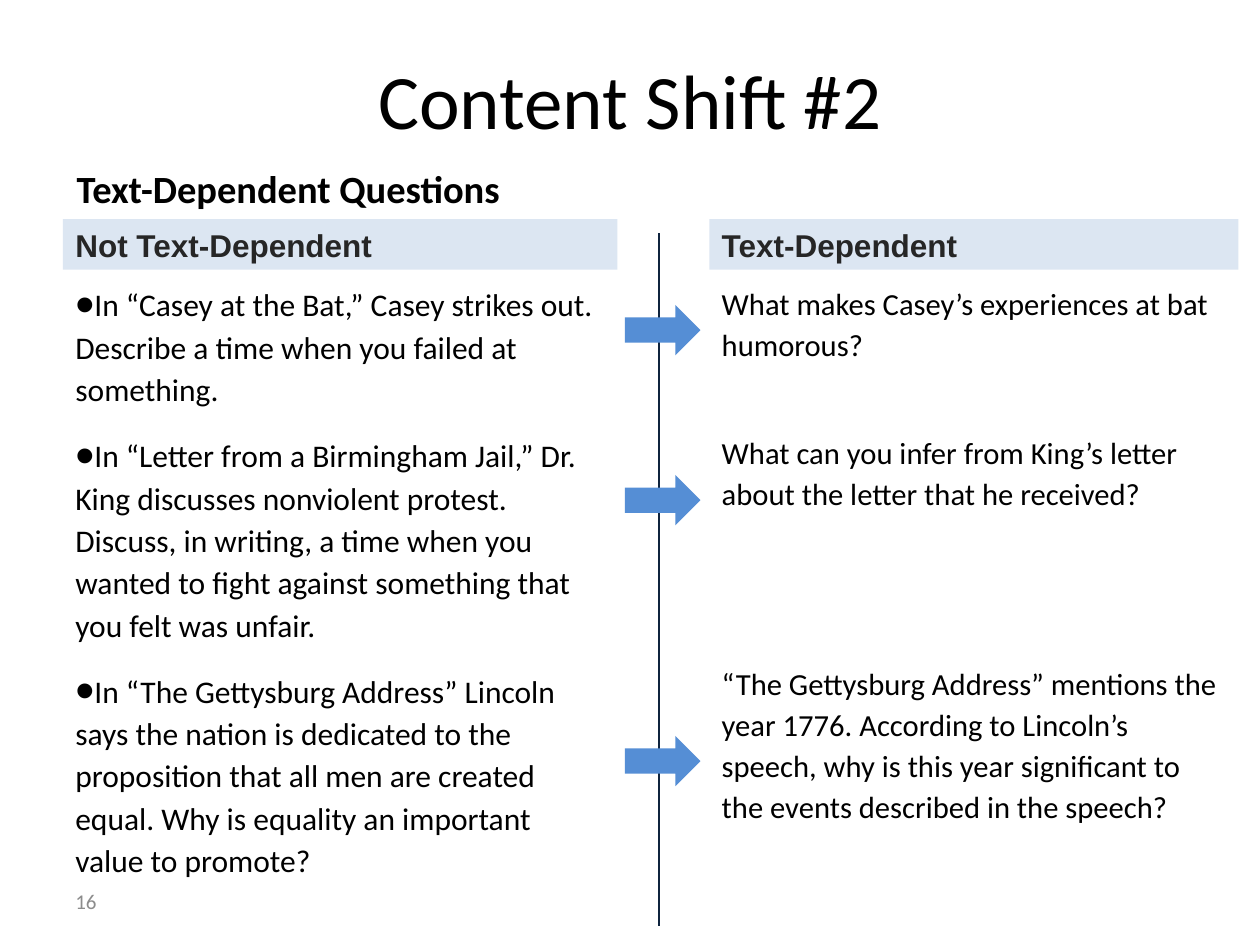
from lxml.etree import SubElement
from pptx import Presentation
from pptx.dml.color import RGBColor
from pptx.enum.shapes import MSO_CONNECTOR as Connector, MSO_SHAPE as Shape
from pptx.enum.text import MSO_ANCHOR as Anchor, PP_ALIGN as Align
from pptx.oxml.ns import qn
from pptx.util import Inches, Pt

BLACK = RGBColor(0x00, 0x00, 0x00)
GRAY = RGBColor(0x8C, 0x8C, 0x8C)
CHARCOAL = RGBColor(0x26, 0x26, 0x26)
PALE_BLUE = RGBColor(0xDC, 0xE6, 0xF2)
ARROW_BLUE = RGBColor(0x55, 0x8E, 0xD5)
NAVY = RGBColor(0x0F, 0x24, 0x3E)

LINE_SPACING = 1.12
LEFT_COLUMN = (0.5, 4.4)
RIGHT_COLUMN = (5.63, 4.2)
ARROW_TOPS = (2.42, 3.77, 5.84)

GENERAL_QUESTIONS = (
    (0, "In “Casey at the Bat,” Casey strikes out. Describe a time when you failed at something."),
    (13.7, "In “Letter from a Birmingham Jail,” Dr. King discusses nonviolent protest. Discuss, in "
           "writing, a time when you wanted to fight against something that you felt was unfair."),
    (13.7, "In “The Gettysburg Address” Lincoln says the nation is dedicated to the proposition "
           "that all men are created equal. Why is equality an important value to promote?"),
)
TEXT_QUESTIONS = (
    (0, "What makes Casey’s experiences at bat humorous?"),
    (37.8, "What can you infer from King’s letter about the letter that he received?"),
    (85.3, "“The Gettysburg Address” mentions the year 1776. According to Lincoln’s speech, "
           "why is this year significant to the events described in the speech?"),
)


def style_text(para, size, color=BLACK, font="Calibri", bold=False):
    """Format every run of a paragraph."""
    for span in para.runs:
        span.font.size = Pt(size)
        span.font.name = font
        span.font.color.rgb = color
        span.font.bold = bold


def add_bullet(para):
    """Give a paragraph a large black bullet without a hanging indent."""
    properties = para._p.get_or_add_pPr()
    properties.set("marL", "0")
    properties.set("indent", "0")
    color = SubElement(properties, qn("a:buClr"))
    SubElement(color, qn("a:srgbClr"), val=str(BLACK))
    SubElement(properties, qn("a:buSzPct"), val="173000")
    SubElement(properties, qn("a:buFont"), typeface="Arial")
    SubElement(properties, qn("a:buChar"), char="•")


def add_box(page, left, top, width, height, wrap=True, anchor=Anchor.TOP):
    """Add an empty text box and return its text frame."""
    frame = page.shapes.add_textbox(
        Inches(left), Inches(top), Inches(width), Inches(height)).text_frame
    frame.word_wrap = wrap
    frame.vertical_anchor = anchor
    return frame


def add_label(page, text, size, bounds, color=BLACK, bold=False,
              align=Align.LEFT, wrap=True, anchor=Anchor.MIDDLE):
    """Add a text box holding a single line."""
    frame = add_box(page, *bounds, wrap=wrap, anchor=anchor)
    frame.text = text
    para = frame.paragraphs[0]
    para.alignment = align
    style_text(para, size, color, bold=bold)
    return para


def add_questions(page, column, height, questions, size, bulleted=False):
    """Add a column of questions, each with its own space before."""
    left, width = column
    frame = add_box(page, left, 2.18, width, height)
    for index, (gap, question) in enumerate(questions):
        para = frame.add_paragraph() if index else frame.paragraphs[0]
        para.text = question
        para.line_spacing = LINE_SPACING
        para.space_before = Pt(gap)
        style_text(para, size)
        if bulleted:
            add_bullet(para)


def add_filled_shape(page, kind, left, top, width, height, color):
    """Add a flat preset shape without an outline."""
    shape = page.shapes.add_shape(
        kind, Inches(left), Inches(top), Inches(width), Inches(height))
    shape.shadow.inherit = False
    shape.fill.solid()
    shape.fill.fore_color.rgb = color
    shape.line.fill.background()
    return shape


def add_header(page, column, text):
    """Add a shaded column heading."""
    left, width = column
    header = add_filled_shape(page, Shape.RECTANGLE, left, 1.74, width, 0.4, PALE_BLUE)
    frame = header.text_frame
    frame.text = text
    frame.vertical_anchor = Anchor.MIDDLE
    frame.paragraphs[0].alignment = Align.LEFT
    style_text(frame.paragraphs[0], 18, CHARCOAL, "Arial", bold=True)


def add_divider(page):
    """Add the vertical line between the columns."""
    divider = page.shapes.add_connector(
        Connector.STRAIGHT, Inches(5.23), Inches(1.85), Inches(5.23), Inches(7.35))
    divider.line.color.rgb = NAVY
    divider.line.width = Pt(1.5)
    SubElement(divider._element.spPr, qn("a:effectLst"))


def main():
    """Build the slide and save it."""
    deck = Presentation()
    deck.slide_width, deck.slide_height = Inches(10), Inches(7.5)
    page = deck.slides.add_slide(deck.slide_layouts[6])

    add_label(page, "Content Shift #2", 44, (0.5, 0.5, 9, 0.57), align=Align.CENTER)
    add_label(page, "16", 12, (0.5, 6.95, 2.33, 0.4), GRAY)
    add_questions(page, LEFT_COLUMN, 4.95, GENERAL_QUESTIONS, 18, bulleted=True)
    add_questions(page, RIGHT_COLUMN, 4.66, TEXT_QUESTIONS, 17.5)
    add_header(page, LEFT_COLUMN, "Not Text-Dependent")
    add_divider(page)
    for top in ARROW_TOPS:
        add_filled_shape(page, Shape.RIGHT_ARROW, 4.96, top, 0.6, 0.4, ARROW_BLUE)
    add_header(page, RIGHT_COLUMN, "Text-Dependent")
    subtitle = add_label(page, "Text-Dependent Questions", 22, (0.51, 1.22, 4.12, 0.49),
                         bold=True, wrap=False, anchor=Anchor.TOP)
    subtitle.line_spacing = LINE_SPACING

    deck.save("out.pptx")


if __name__ == "__main__":
    main()
